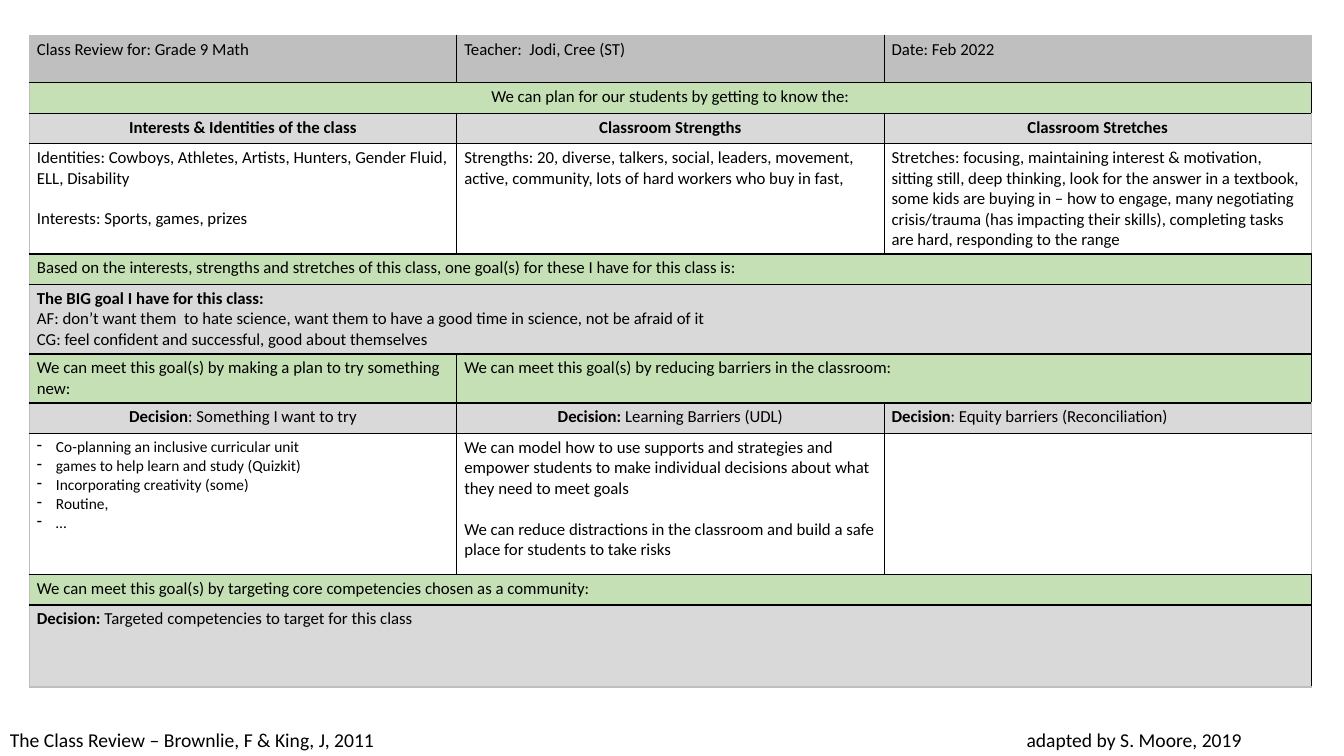
from dataclasses import dataclass
from itertools import accumulate

from lxml import etree
from pptx import Presentation
from pptx.dml.color import RGBColor
from pptx.enum.text import PP_ALIGN
from pptx.oxml.ns import qn
from pptx.util import Cm, Pt

CENTER, LEFT = PP_ALIGN.CENTER, PP_ALIGN.LEFT


@dataclass(frozen=True)
class Theme:
    font: str = "Calibri"
    ink: str = "000000"
    edge: str = "BFBFBF"
    header: str = "BFBFBF"
    prompt: str = "C5E0B4"
    label: str = "D9D9D9"
    paper: str = "FFFFFF"
    body_size: float = 12
    list_size: float = 11
    footer_size: float = 14
    border_width: float = 1


THEME = Theme()


@dataclass(frozen=True)
class Line:
    """One paragraph: a bold lead followed by plain text."""
    text: str = ""
    lead: str = ""
    align: PP_ALIGN = LEFT
    bullet: bool = False
    gap_before: float = 0


@dataclass(frozen=True)
class Entry:
    lines: tuple
    span: int = 1


def entry(*lines, span=1):
    """Accept plain strings as well as Line objects."""
    return Entry(tuple(Line(l) if isinstance(l, str) else l for l in lines), span)


def heading(lead, text=""):
    return entry(Line(text, lead, CENTER))


PARAGRAPH_GAP = 14.6
COLUMN_COUNT = 3

# Each row: height in cm, fill colour, entries
REVIEW_ROWS = [
    (1.19, THEME.header, [
        entry("Class Review for: Grade 9 Math"),
        entry("Teacher:  Jodi, Cree (ST)"),
        entry("Date: Feb 2022")]),
    (0.77, THEME.prompt, [
        entry(Line("We can plan for our students by getting to know the:",
                   align=CENTER), span=3)]),
    (0.77, THEME.label, [
        heading("Interests & Identities of the class"),
        heading("Classroom Strengths"),
        heading("Classroom Stretches")]),
    (2.77, THEME.paper, [
        entry("Identities: Cowboys, Athletes, Artists, Hunters, Gender Fluid, "
              "ELL, Disability",
              Line("Interests: Sports, games, prizes", gap_before=PARAGRAPH_GAP)),
        entry("Strengths: 20, diverse, talkers, social, leaders, movement, "
              "active, community, lots of hard workers who buy in fast,"),
        entry("Stretches: focusing, maintaining interest & motivation, sitting "
              "still, deep thinking, look for the answer in a textbook, some "
              "kids are buying in – how to engage, many negotiating "
              "crisis/trauma (has impacting their skills), completing tasks "
              "are hard, responding to the range")]),
    (0.77, THEME.prompt, [
        entry("Based on the interests, strengths and stretches of this class, "
              "one goal(s) for these I have for this class is:", span=3)]),
    (1.74, THEME.label, [
        entry(Line(lead="The BIG goal I have for this class:"),
              "AF: don’t want them  to hate science, want them to have a good "
              "time in science, not be afraid of it",
              "CG: feel confident and successful, good about themselves",
              span=3)]),
    (1.21, THEME.prompt, [
        entry("We can meet this goal(s) by making a plan to try something new:"),
        entry("We can meet this goal(s) by reducing barriers in the classroom:",
              span=2)]),
    (0.77, THEME.label, [
        heading("Decision", ": Something I want to try"),
        heading("Decision: ", "Learning Barriers (UDL)"),
        entry(Line(": Equity barriers (Reconciliation)", "Decision"))]),
    (3.55, THEME.paper, [
        entry(*(Line(idea, bullet=True) for idea in (
            "Co-planning an inclusive curricular unit",
            "games to help learn and study (Quizkit)",
            "Incorporating creativity (some)",
            "Routine,",
            "…"))),
        entry("We can model how to use supports and strategies and empower "
              "students to make individual decisions about what they need to "
              "meet goals",
              Line("We can reduce distractions in the classroom and build a "
                   "safe place for students to take risks",
                   gap_before=PARAGRAPH_GAP)),
        entry()]),
    (0.77, THEME.prompt, [
        entry("We can meet this goal(s) by targeting core competencies chosen "
              "as a community:", span=3)]),
    (2.07, THEME.label, [
        entry(Line("Targeted competencies to target for this class",
                   "Decision: "), span=3)]),
]


def style_run(run, size, bold=False):
    run.font.name = THEME.font
    run.font.size = Pt(size)
    run.font.bold = bold
    run.font.color.rgb = RGBColor.from_string(THEME.ink)


def add_dash(paragraph):
    properties = paragraph._p.get_or_add_pPr()
    properties.set("marL", str(Cm(0.48)))
    properties.set("indent", str(-Cm(0.48)))
    etree.SubElement(properties, qn("a:buChar"), char="-")


def write_lines(frame, lines):
    for index, line in enumerate(lines):
        paragraph = frame.add_paragraph() if index else frame.paragraphs[0]
        paragraph.alignment = line.align
        if line.gap_before:
            paragraph.space_before = Pt(line.gap_before)
        if line.bullet:
            add_dash(paragraph)
        size = THEME.list_size if line.bullet else THEME.body_size
        for words, bold in ((line.lead, True), (line.text, False)):
            if words:
                run = paragraph.add_run()
                run.text = words
                style_run(run, size, bold)


def set_borders(cell, row, column):
    """Dark rules inside the table, pale ones on its outer edge."""
    outer = {"L": column == 0, "R": column == COLUMN_COUNT - 1,
             "T": row == 0, "B": row == len(REVIEW_ROWS) - 1}
    properties = cell._tc.get_or_add_tcPr()
    for side, is_outer in outer.items():
        rule = etree.SubElement(properties, qn(f"a:ln{side}"),
                                w=str(Pt(THEME.border_width)))
        fill = etree.SubElement(rule, qn("a:solidFill"))
        etree.SubElement(fill, qn("a:srgbClr"),
                         val=THEME.edge if is_outer else THEME.ink)


def add_review_table(slide, left, top, width):
    heights = [height for height, _, _ in REVIEW_ROWS]
    table = slide.shapes.add_table(len(REVIEW_ROWS), COLUMN_COUNT, left, top,
                                   width, Cm(sum(heights))).table
    table.first_row = table.horz_banding = False
    for row, (height, colour, entries) in enumerate(REVIEW_ROWS):
        table.rows[row].height = Cm(height)
        for column in range(COLUMN_COUNT):
            cell = table.cell(row, column)
            set_borders(cell, row, column)
            cell.fill.solid()
            cell.fill.fore_color.rgb = RGBColor.from_string(colour)
            cell.margin_left = cell.margin_right = Cm(0.19)
            cell.margin_top = cell.margin_bottom = Cm(0.1)
        starts = accumulate((item.span for item in entries), initial=0)
        for start, item in zip(starts, entries):
            cell = table.cell(row, start)
            if item.span > 1:
                cell.merge(table.cell(row, start + item.span - 1))
            write_lines(cell.text_frame, item.lines)


def add_credits(slide, left, top, width, height):
    """Authors at the left, adapter at a tab stop on the same line."""
    frame = slide.shapes.add_textbox(left, top, width, height).text_frame
    frame.word_wrap = True
    credits = frame.paragraphs[0]
    credits.text = ("The Class Review – Brownlie, F & King, J, 2011"
                    "\tadapted by S. Moore, 2019")
    for run in credits.runs:
        style_run(run, THEME.footer_size)
    tabs = etree.SubElement(credits._p.get_or_add_pPr(), qn("a:tabLst"))
    etree.SubElement(tabs, qn("a:tab"), pos=str(Cm(25.62)), algn="l")


def main():
    deck = Presentation()
    deck.slide_width, deck.slide_height = Cm(33.87), Cm(19.05)
    slide = deck.slides.add_slide(deck.slide_layouts[6])
    add_review_table(slide, Cm(0.74), Cm(0.89), Cm(32.31))
    add_credits(slide, Cm(0), Cm(18.21), deck.slide_width, Cm(0.86))
    deck.save("out.pptx")


if __name__ == "__main__":
    main()
